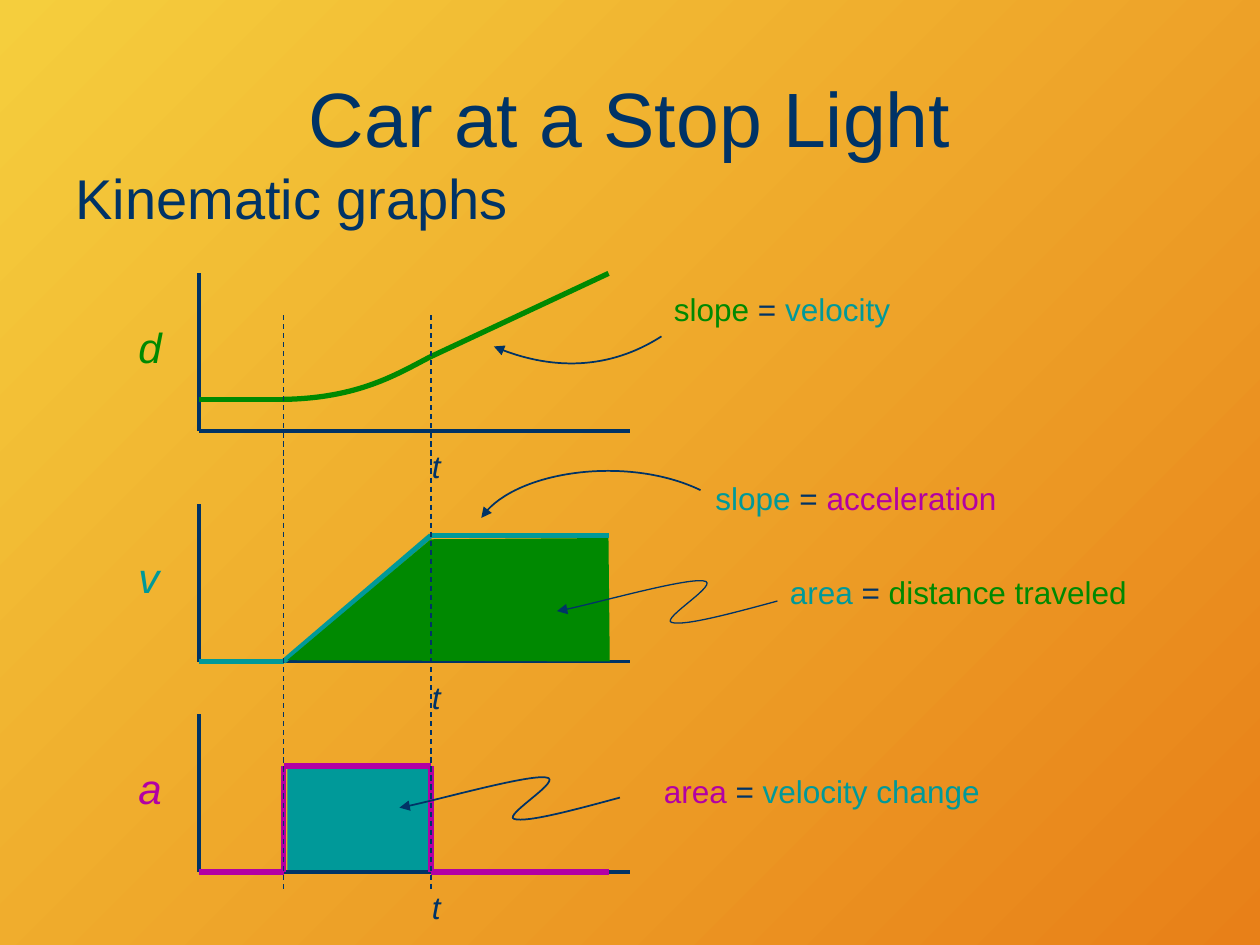
from lxml import etree
from pptx import Presentation
from pptx.dml.color import RGBColor
from pptx.enum.dml import MSO_LINE
from pptx.enum.shapes import MSO_CONNECTOR, MSO_SHAPE
from pptx.enum.text import MSO_ANCHOR, PP_ALIGN
from pptx.oxml.ns import qn
from pptx.util import Inches, Pt

NAVY, GREEN, TEAL, PURPLE = "003366", "008901", "009999", "B300A4"
# Times at which the car starts and stops accelerating, and the plot edges
ORIGIN, START, CRUISE, END, AXIS_END = 1.58, 2.25, 3.42, 4.83, 5
AXIS_HEIGHT = 1.25
SQUIGGLE = [(0, 0), (-0.37, 0.1), (-0.74, 0.2), (-0.84, 0.17),
            (-0.93, 0.14), (-0.43, -0.15), (-0.59, -0.16),
            (-0.74, -0.18), (-1.56, 0.05), (-1.75, 0.08)]


def color(hex_value):
    return RGBColor.from_string(hex_value)


def add_text(slide, box, runs, size, italic=False, align=PP_ALIGN.LEFT,
             anchor=MSO_ANCHOR.TOP, wrap=True):
    frame = slide.shapes.add_textbox(*map(Inches, box)).text_frame
    frame.word_wrap = wrap
    frame.vertical_anchor = anchor
    paragraph = frame.paragraphs[0]
    paragraph.alignment = align
    paragraph.font.name = "Arial"
    paragraph.font.size = Pt(size)
    paragraph.font.italic = italic
    for words, hue in runs:
        run = paragraph.add_run()
        run.text = words
        run.font.color.rgb = color(hue)


def add_lines(slide, points, hue, width, dash=None):
    """Join the points with straight connectors."""
    for begin, end in zip(points, points[1:]):
        connector = slide.shapes.add_connector(
            MSO_CONNECTOR.STRAIGHT, *map(Inches, begin + end))
        connector.line.color.rgb = color(hue)
        connector.line.width = Pt(width)
        connector.line.dash_style = dash
        etree.SubElement(connector._element.spPr, qn("a:effectLst"))


def add_outline(slide, points, closed=False):
    first, *others = [(Inches(x), Inches(y)) for x, y in points]
    builder = slide.shapes.build_freeform(*first)
    builder.add_line_segments(others, close=closed)
    shape = builder.convert_to_shape()
    shape.shadow.inherit = False
    return shape


def add_curve(slide, points, hue, width, arrow=False):
    """Draw cubic curves: a start point, then three points for each curve."""
    shape = add_outline(slide, points)
    shape.fill.background()
    shape.line.color.rgb = color(hue)
    shape.line.width = Pt(width)
    outline = next(shape._element.iter(qn("a:path")))
    segments = outline.findall(qn("a:lnTo"))
    for i in range(0, len(segments), 3):
        bezier = etree.SubElement(outline, qn("a:cubicBezTo"))
        for segment in segments[i:i + 3]:
            bezier.append(segment[0])
            outline.remove(segment)
    if arrow:
        etree.SubElement(shape._element.spPr.find(qn("a:ln")),
                         qn("a:tailEnd"), type="triangle")


def add_axes(slide, top, label, hue):
    base = top + AXIS_HEIGHT
    add_lines(slide, [(ORIGIN, top), (ORIGIN, base), (AXIS_END, base)], NAVY, 2.25)
    add_text(slide, (1, top + 0.33, 0.43, 0.5), [(label, hue)], 24, italic=True)
    add_text(slide, (3.33, top + 1.33, 0.43, 0.4), [("t", NAVY)], 18, italic=True)


def add_distance_graph(slide, top):
    rest, bend = top + 1, top + 0.66
    add_axes(slide, top, "d", GREEN)
    add_lines(slide, [(ORIGIN, rest), (START, rest)], GREEN, 3)
    add_curve(slide, [(START, rest), (2.85, rest - 0.01),
                      (3.15, rest - 0.2), (CRUISE, bend)], GREEN, 3)
    add_lines(slide, [(CRUISE, bend), (END, top)], GREEN, 3)


def add_velocity_graph(slide, top):
    base, cruise = top + AXIS_HEIGHT, top + 0.25
    add_axes(slide, top, "v", TEAL)
    add_lines(slide, [(ORIGIN, base), (START, base), (CRUISE, cruise),
                      (END, cruise)], TEAL, 3)
    # Area under the velocity line
    area = add_outline(slide, [(2.28, base - 0.01), (CRUISE, cruise + 0.03),
                               (END, cruise + 0.02), (4.84, base)], closed=True)
    area.fill.solid()
    area.fill.fore_color.rgb = color(GREEN)
    area.line.fill.background()


def add_acceleration_graph(slide, top):
    base, peak = top + AXIS_HEIGHT, top + 0.41
    # Area under the acceleration line
    area = slide.shapes.add_shape(
        MSO_SHAPE.RECTANGLE, *map(Inches, (2.28, peak + 0.02, 1.12, 0.81)))
    area.shadow.inherit = False
    area.fill.solid()
    area.fill.fore_color.rgb = color(TEAL)
    area.line.fill.background()
    add_axes(slide, top, "a", PURPLE)
    add_lines(slide, [(ORIGIN, base), (START, base), (START, peak),
                      (CRUISE, peak), (CRUISE, base), (END, base)], PURPLE, 3)


def add_note(slide, box, measure, meaning, start, offsets, width=1):
    """Place a note and its arrow, which starts relative to the note."""
    add_text(slide, box, [measure, (" = ", NAVY), meaning], 18, wrap=False)
    x, y = box[0] + start[0], box[1] + start[1]
    add_curve(slide, [(x + dx, y + dy) for dx, dy in offsets], NAVY, width,
              arrow=True)


def add_time_markers(slide, top, bottom):
    for x in (START, CRUISE):
        add_lines(slide, [(x, top), (x, bottom)], NAVY, 0.75, MSO_LINE.DASH)


def main():
    deck = Presentation()
    deck.slide_width, deck.slide_height = Inches(10), Inches(7.5)
    slide = deck.slides.add_slide(deck.slide_layouts[6])

    # Background runs from top left to bottom right
    backdrop = slide.background.fill
    backdrop.gradient()
    backdrop.gradient_angle = 315
    for stop, hue in zip(backdrop.gradient_stops, ("F5CE3D", "E88018")):
        stop.color.rgb = color(hue)

    # Headings
    add_text(slide, (0.5, 0.3, 9, 1.25), [("Car at a Stop Light", NAVY)], 44,
             align=PP_ALIGN.CENTER, anchor=MSO_ANCHOR.MIDDLE)
    add_text(slide, (0.5, 1.25, 8.83, 0.83), [("Kinematic graphs", NAVY)], 32)

    # Graphs
    add_distance_graph(slide, 2.17)
    add_velocity_graph(slide, 4)
    add_acceleration_graph(slide, 5.67)

    # Notes
    add_note(slide, (5.17, 6.08, 2.73, 0.4), ("area", PURPLE),
             ("velocity change", TEAL), (-0.25, 0.25), SQUIGGLE)
    add_note(slide, (6.17, 4.5, 2.9, 0.4), ("area", TEAL),
             ("distance traveled", GREEN), (0, 0.27), SQUIGGLE, 0.75)
    add_note(slide, (5.25, 2.25, 1.92, 0.4), ("slope", GREEN),
             ("velocity", TEAL), (0, 0.42),
             [(0, 0), (-0.42, 0.27), (-0.92, 0.26), (-1.33, 0.08)])
    add_note(slide, (5.58, 3.75, 2.43, 0.4), ("slope", TEAL),
             ("acceleration", PURPLE), (-0.02, 0.14),
             [(0, 0), (-0.56, -0.27), (-1.5, -0.15), (-1.74, 0.22)])

    add_time_markers(slide, 2.5, 7.08)
    deck.save("out.pptx")


if __name__ == "__main__":
    main()
